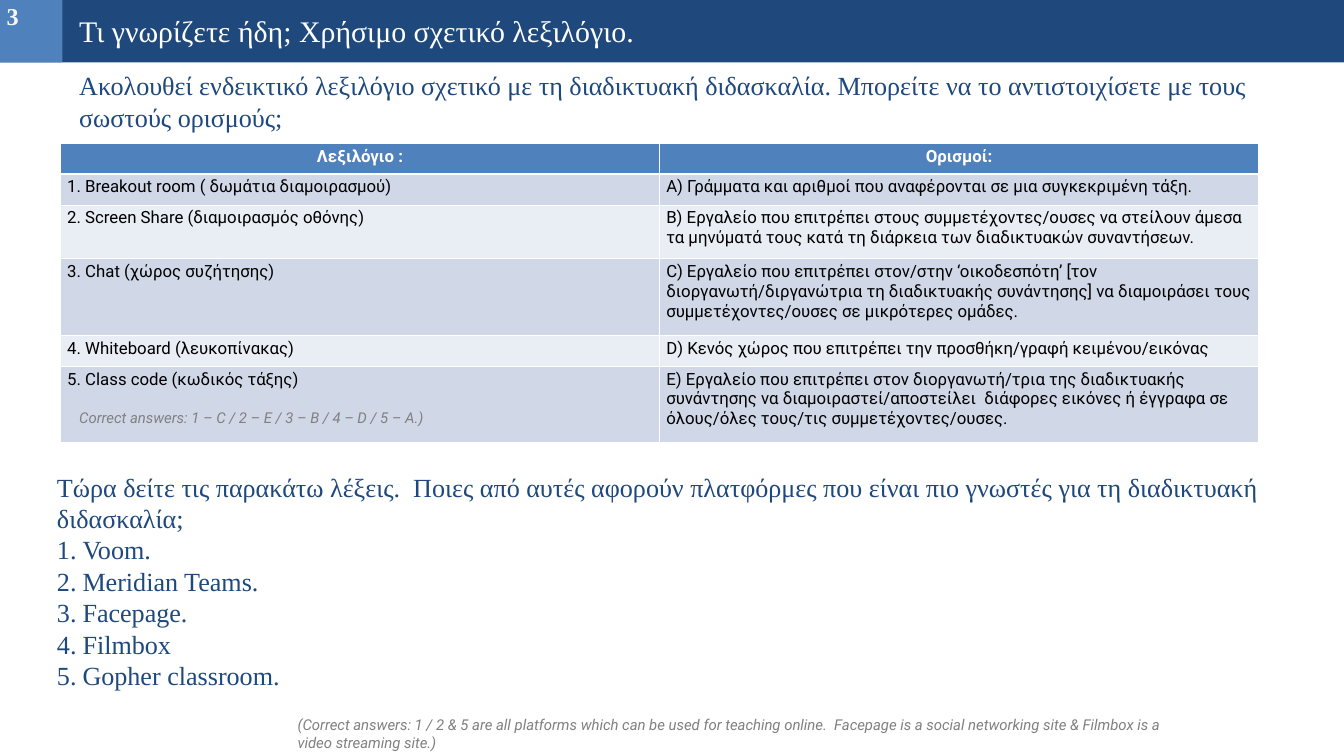
from lxml import etree
from pptx import Presentation
from pptx.dml.color import RGBColor
from pptx.enum import shapes, text
from pptx.oxml.ns import qn
from pptx.util import Inches, Pt

NAVY = RGBColor(0x1F, 0x49, 0x7D)
BLUE = RGBColor(0x4F, 0x81, 0xBD)
BAND_DARK = RGBColor(0xD0, 0xD8, 0xE8)
BAND_LIGHT = RGBColor(0xE9, 0xED, 0xF4)
WHITE = RGBColor(0xFF, 0xFF, 0xFF)
NUMBER = RGBColor(0xF7, 0xF7, 0xF7)
GREY = RGBColor(0x80, 0x80, 0x80)
BLACK = RGBColor(0, 0, 0)
SERIF, SANS = "Times New Roman", "Roboto"

SLIDE_W, SLIDE_H = 20, 11.25
BAR_H = 0.93

TITLE = "Τι γνωρίζετε ήδη; Χρήσιμο σχετικό λεξιλόγιο."
INTRO = ("Ακολουθεί ενδεικτικό λεξιλόγιο σχετικό με τη διαδικτυακή διδασκαλία. "
         "Μπορείτε να το αντιστοιχίσετε με τους σωστούς ορισμούς;")
VOCABULARY = [
    ("Λεξιλόγιο :", "Ορισμοί:"),
    ("1. Breakout room ( δωμάτια διαμοιρασμού)",
     "A) Γράμματα και αριθμοί που αναφέρονται σε μια συγκεκριμένη τάξη."),
    ("2. Screen Share (διαμοιρασμός οθόνης)",
     "B) Εργαλείο που επιτρέπει στους συμμετέχοντες/ουσες να στείλουν άμεσα "
     "τα μηνύματά τους κατά τη διάρκεια των διαδικτυακών συναντήσεων."),
    ("3. Chat (χώρος συζήτησης)",
     "C) Εργαλείο που επιτρέπει στον/στην ‘οικοδεσπότη’ [τον "
     "διοργανωτή/διργανώτρια τη διαδικτυακής συνάντησης] να διαμοιράσει τους "
     "συμμετέχοντες/ουσες σε μικρότερες ομάδες."),
    ("4. Whiteboard (λευκοπίνακας)",
     "D) Κενός χώρος που επιτρέπει την προσθήκη/γραφή κειμένου/εικόνας"),
    ("5. Class code (κωδικός τάξης)",
     "E) Εργαλείο που επιτρέπει στον διοργανωτή/τρια της διαδικτυακής "
     "συνάντησης να διαμοιραστεί/αποστείλει  διάφορες εικόνες ή έγγραφα σε "
     "όλους/όλες τους/τις συμμετέχοντες/ουσες."),
]
ROW_HEIGHTS = [0.46, 0.46, 0.8, 1.14, 0.46, 1.14]
QUESTION = ("Τώρα δείτε τις παρακάτω λέξεις.  Ποιες από αυτές αφορούν πλατφόρμες "
            "που είναι πιο γνωστές για τη διαδικτυακή διδασκαλία;")
PLATFORMS = ["Voom.", "Meridian Teams.", "Facepage.", "Filmbox", "Gopher classroom."]
MATCH_KEY = "Correct answers: 1 – C / 2 – E / 3 – B / 4 – D / 5 – A.)"
PLATFORM_KEY = ("(Correct answers: 1 / 2 & 5 are all platforms which can be used for "
                "teaching online.  Facepage is a social networking site & Filmbox is "
                "a video streaming site.)")


def add_run(p, words, size, font, color, bold=False, italic=False):
    r = p.add_run()
    r.text = words
    f = r.font
    f.size, f.name, f.bold, f.italic = Pt(size), font, bold, italic
    f.color.rgb = color


def add_block(slide, x, y, w, h, color):
    sp = slide.shapes.add_shape(shapes.MSO_SHAPE.RECTANGLE,
                                Inches(x), Inches(y), Inches(w), Inches(h))
    sp.shadow.inherit = False
    sp.fill.solid()
    sp.fill.fore_color.rgb = color
    sp.line.fill.background()


def add_text(slide, box, words, size, font, color, middle=False, **style):
    tf = slide.shapes.add_textbox(*map(Inches, box)).text_frame
    tf.word_wrap = True
    tf.vertical_anchor = text.MSO_ANCHOR.MIDDLE if middle else text.MSO_ANCHOR.TOP
    add_run(tf.paragraphs[0], words, size, font, color, **style)
    return tf


def number_paragraph(p, indent=0.38):
    pPr = p._p.get_or_add_pPr()
    pPr.set("marL", str(Inches(indent)))
    pPr.set("indent", str(-Inches(indent)))
    etree.SubElement(pPr, qn("a:buFont")).set("typeface", "+mj-lt")
    etree.SubElement(pPr, qn("a:buAutoNum")).set("type", "arabicPeriod")


def set_borders(cell, **widths):
    """Draw white borders; widths are points by side: L, R, T, B."""
    tcPr = cell._tc.get_or_add_tcPr()
    for i, (side, width) in enumerate(widths.items()):
        ln = etree.Element(qn(f"a:ln{side}"), w=str(Pt(width)))
        fill = etree.SubElement(ln, qn("a:solidFill"))
        etree.SubElement(fill, qn("a:srgbClr")).set("val", str(WHITE))
        tcPr.insert(i, ln)


def add_vocabulary(slide, x, y, w):
    table = slide.shapes.add_table(
        len(VOCABULARY), 2, Inches(x), Inches(y), Inches(w),
        Inches(sum(ROW_HEIGHTS))).table
    for col in table.columns:
        col.width = Inches(w / 2)
    for i, (row, height) in enumerate(zip(VOCABULARY, ROW_HEIGHTS)):
        table.rows[i].height = Inches(height)
        header = i == 0
        fill = BLUE if header else BAND_DARK if i % 2 else BAND_LIGHT
        for j, words in enumerate(row):
            cell = table.cell(i, j)
            cell.fill.solid()
            cell.fill.fore_color.rgb = fill
            set_borders(cell, L=1, R=1, T=3 if i == 1 else 1, B=3 if header else 1)
            p = cell.text_frame.paragraphs[0]
            p.alignment = text.PP_ALIGN.CENTER if header else text.PP_ALIGN.LEFT
            add_run(p, words, 18, SANS, WHITE if header else BLACK, bold=header)


def main():
    prs = Presentation()
    prs.slide_width, prs.slide_height = Inches(SLIDE_W), Inches(SLIDE_H)
    slide = prs.slides.add_slide(prs.slide_layouts[6])

    add_block(slide, 0, 0, SLIDE_W, BAR_H, NAVY)
    add_block(slide, 0, 0, BAR_H, BAR_H, BLUE)
    add_text(slide, (1.08, 0.12, 10.33, 0.67), TITLE, 32, SERIF, WHITE, middle=True)
    add_text(slide, (0, -0.03, 0.9, BAR_H), "3", 26, SERIF, NUMBER, bold=True)
    add_text(slide, (1.08, 1.05, 17.83, 0.91), INTRO, 28, SERIF, NAVY, middle=True)

    add_vocabulary(slide, 0.9, 2.13, 17.83)
    add_text(slide, (1.08, 6.03, 17.83, 0.67), MATCH_KEY, 16, SANS, GREY, italic=True)

    tf = add_text(slide, (0.75, 6.96, 18.67, 3.7), QUESTION, 28, SERIF, NAVY)
    for name in PLATFORMS:
        p = tf.add_paragraph()
        number_paragraph(p)
        add_run(p, name, 28, SERIF, NAVY)
    add_text(slide, (4.33, 10.6, 13.58, 0.63), PLATFORM_KEY, 16, SANS, GREY, italic=True)

    prs.save("out.pptx")


if __name__ == "__main__":
    main()
